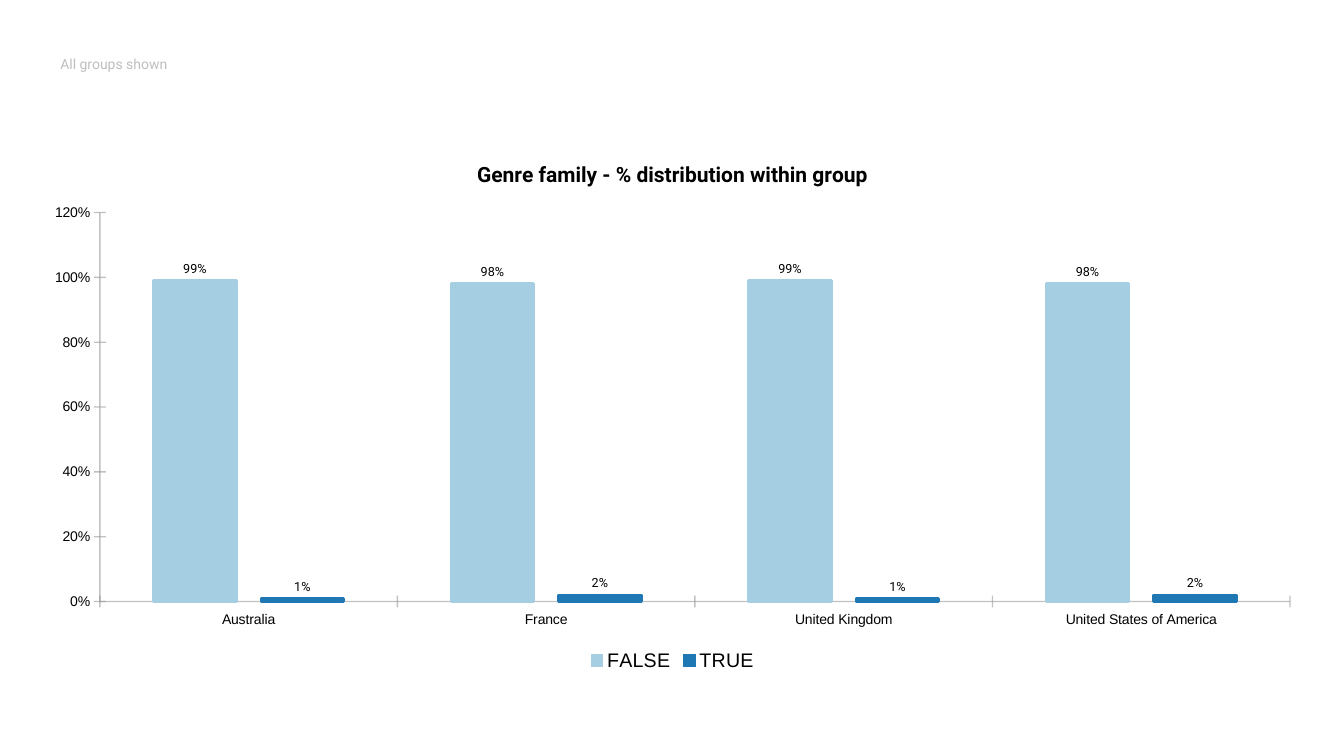
from lxml import etree
from pptx import Presentation
from pptx import util as u
from pptx.chart.data import CategoryChartData
from pptx.dml.color import RGBColor
from pptx.enum import chart as kinds
from pptx.oxml.ns import qn

COLORS = {"text": "000000", "note": "BEBEBE", "axis": "999999",
          "FALSE": "A6CEE3", "TRUE": "1F78B4"}
SHARES = {"FALSE": (0.99, 0.98, 0.99, 0.98), "TRUE": (0.01, 0.02, 0.01, 0.02)}


def style_font(font, name, size, color="text", bold=False):
    font.name = name
    font.size = u.Pt(size)
    font.bold = bold
    font.color.rgb = RGBColor.from_string(COLORS[color])


deck = Presentation()
deck.slide_width, deck.slide_height = u.Inches(13.33), u.Inches(7.5)
page = deck.slides.add_slide(deck.slide_layouts[6])

# Chart data and frame
data = CategoryChartData(number_format="0%")
data.categories = ["Australia", "France", "United Kingdom", "United States of America"]
for name, values in SHARES.items():
    data.add_series(name, values)
chart = page.shapes.add_chart(
    kinds.XL_CHART_TYPE.COLUMN_CLUSTERED, u.Inches(0.29), u.Inches(1.39),
    u.Inches(12.76), u.Inches(5.31), data).chart
style_font(chart.font, "Roboto", 18)

# Title and legend
chart.has_title = True
title = chart.chart_title
title.include_in_layout = False
span = title.text_frame.paragraphs[0].add_run()
span.text = "Genre family - % distribution within group"
style_font(span.font, "Roboto", 15, bold=True)
chart.has_legend = True
chart.legend.position = kinds.XL_LEGEND_POSITION.BOTTOM
chart.legend.include_in_layout = False
style_font(chart.legend.font, "Arial", 14)

# Axes
for axis in (chart.category_axis, chart.value_axis):
    axis.has_major_gridlines = False
    axis.major_tick_mark = kinds.XL_TICK_MARK.CROSS
    axis.minor_tick_mark = kinds.XL_TICK_MARK.NONE
    style_font(axis.tick_labels.font, "Arial", 10)
    line = axis.format.line
    line.width = u.Pt(1)
    line.color.rgb = RGBColor.from_string(COLORS["axis"])
    for color in axis.format.line.fill._xPr.iter(qn("a:srgbClr")):
        etree.SubElement(color, qn("a:alpha"), val="60000")
chart.value_axis.minimum_scale = 0
chart.value_axis.tick_labels.number_format = "0%"
chart.value_axis.tick_labels.number_format_is_linked = False

# Columns and their labels
plot = chart.plots[0]
plot.vary_by_categories = False
plot.gap_width = 130
plot.overlap = -30
for series in plot.series:
    color = RGBColor.from_string(COLORS[series.name])
    series.format.fill.solid()
    series.format.fill.fore_color.rgb = color
    series.format.line.color.rgb = color
    series.format.line.width = u.Pt(2)
    labels = series.data_labels
    labels.show_value = True
    labels.position = kinds.XL_LABEL_POSITION.OUTSIDE_END
    labels.number_format = "0%"
    labels.number_format_is_linked = False
    style_font(labels.font, "Roboto", 9)

# Filter note
box = page.shapes.add_textbox(u.Inches(0.5), u.Inches(0.5), u.Inches(6), u.Inches(1))
box.text_frame.word_wrap = True
span = box.text_frame.paragraphs[0].add_run()
span.text = "All groups shown"
style_font(span.font, "Roboto", 10, "note")

deck.save("out.pptx")
